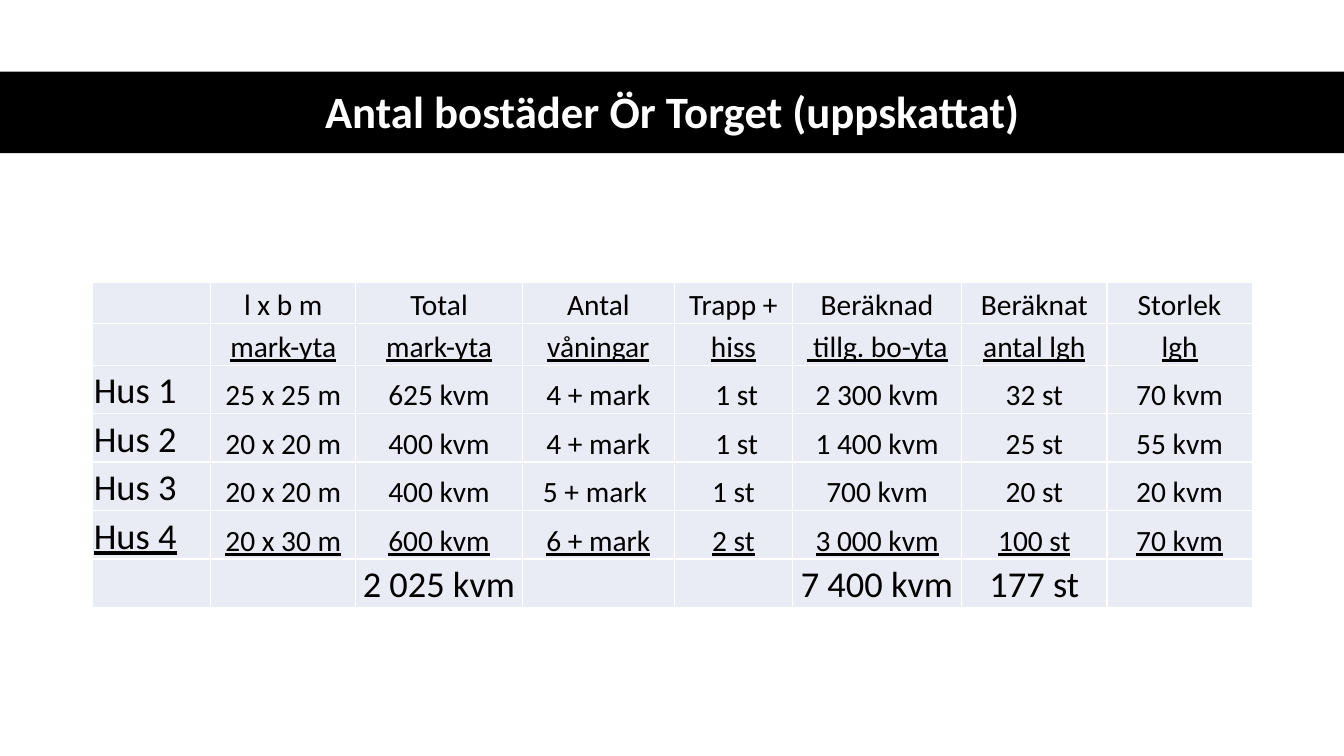
from lxml import etree
from pptx import Presentation
from pptx.dml.color import RGBColor
from pptx.enum.shapes import MSO_SHAPE
from pptx.enum.text import MSO_ANCHOR, PP_ALIGN
from pptx.oxml.ns import qn
from pptx.util import Inches, Pt

RECTANGLE = MSO_SHAPE.RECTANGLE
MIDDLE, BOTTOM = MSO_ANCHOR.MIDDLE, MSO_ANCHOR.BOTTOM
LEFT, CENTER = PP_ALIGN.LEFT, PP_ALIGN.CENTER

FONT = "Calibri"
COLORS = {"banner": "000000", "title": "FFFFFF", "text": "000000",
          "cell": "E9EBF5", "border": "FFFFFF"}

COLUMN_WIDTHS = [1.17, 1.44, 1.65, 1.51, 1.17, 1.68, 1.44, 1.44]
ROW_HEIGHTS = [0.41] * 2 + [0.48] * 5
HOUSING_ROWS = [
    ["", "l x b m", "Total", "Antal", "Trapp +", "Beräknad", "Beräknat", "Storlek"],
    ["", "mark-yta", "mark-yta", "våningar", "hiss", " tillg. bo-yta", "antal lgh", "lgh"],
    ["Hus 1", "25 x 25 m", "625 kvm", "4 + mark", " 1 st", "2 300 kvm", "32 st", "70 kvm"],
    ["Hus 2", "20 x 20 m", "400 kvm", "4 + mark", " 1 st", "1 400 kvm", "25 st", "55 kvm"],
    ["Hus 3", "20 x 20 m", "400 kvm", "5 + mark ", "1 st", "700 kvm", "20 st", "20 kvm"],
    ["Hus 4", "20 x 30 m", "600 kvm", "6 + mark", "2 st", "3 000 kvm", "100 st", "70 kvm"],
    ["", "", "2 025 kvm", "", "", "7 400 kvm", "177 st", ""],
]
UNDERLINED_ROWS = (1, 5)
TOTAL_ROW = len(HOUSING_ROWS) - 1


def color(name):
    return RGBColor.from_string(COLORS[name])


def add_banner(slide, left, top, width, height):
    """Black band across the slide with the title on it."""
    band = slide.shapes.add_shape(
        RECTANGLE, Inches(left), Inches(top), Inches(width), Inches(height))
    band.shadow.inherit = False
    band.fill.solid()
    band.fill.fore_color.rgb = color("banner")
    band.line.fill.background()

    title = slide.shapes.add_textbox(
        Inches(left + 0.92), Inches(top + 0.03),
        Inches(width - 1.83), Inches(height - 0.03))
    frame = title.text_frame
    frame.word_wrap = True
    frame.vertical_anchor = MIDDLE
    paragraph = frame.paragraphs[0]
    paragraph.text = "Antal bostäder Ör Torget (uppskattat)"
    paragraph.alignment = CENTER
    paragraph.line_spacing = 0.9
    paragraph.font.name = FONT
    paragraph.font.size = Pt(32)
    paragraph.font.bold = True
    paragraph.font.color.rgb = color("title")


def add_borders(cell):
    properties = cell._tc.get_or_add_tcPr()
    for side in ("a:lnL", "a:lnR", "a:lnT", "a:lnB"):
        line = etree.SubElement(properties, qn(side), w=str(Pt(1)))
        fill = etree.SubElement(line, qn("a:solidFill"))
        etree.SubElement(fill, qn("a:srgbClr"), val=COLORS["border"])


def fill_cell(cell, text, size, alignment, underline):
    add_borders(cell)
    cell.fill.solid()
    cell.fill.fore_color.rgb = color("cell")
    cell.vertical_anchor = BOTTOM
    cell.margin_left = cell.margin_right = cell.margin_top = Inches(0.01)
    cell.margin_bottom = 0
    paragraph = cell.text_frame.paragraphs[0]
    if text:
        paragraph.text = text
    paragraph.alignment = alignment
    paragraph.font.name = FONT
    paragraph.font.size = Pt(size)
    paragraph.font.underline = underline
    paragraph.font.color.rgb = color("text")


def add_housing_table(slide, left, top, width, height):
    """Estimated areas and apartments for each building."""
    table = slide.shapes.add_table(
        len(ROW_HEIGHTS), len(COLUMN_WIDTHS),
        Inches(left), Inches(top), Inches(width), Inches(height)).table
    table.first_row = False
    table.horz_banding = False
    for column, share in zip(table.columns, COLUMN_WIDTHS):
        column.width = Inches(width * share / sum(COLUMN_WIDTHS))
    for row, share in zip(table.rows, ROW_HEIGHTS):
        row.height = Inches(height * share / sum(ROW_HEIGHTS))

    for row_index, texts in enumerate(HOUSING_ROWS):
        for column_index, text in enumerate(texts):
            large = text and (column_index == 0 or row_index == TOTAL_ROW)
            fill_cell(table.cell(row_index, column_index), text,
                      size=26 if large else 21,
                      alignment=LEFT if column_index == 0 else CENTER,
                      underline=row_index in UNDERLINED_ROWS)


def main():
    presentation = Presentation()
    presentation.slide_width = Inches(13.33)
    presentation.slide_height = Inches(7.5)
    slide = presentation.slides.add_slide(presentation.slide_layouts[6])
    add_banner(slide, 0, 0.71, 13.33, 0.81)
    add_housing_table(slide, 0.92, 2.8, 11.5, 3.23)
    presentation.save("out.pptx")


if __name__ == "__main__":
    main()
